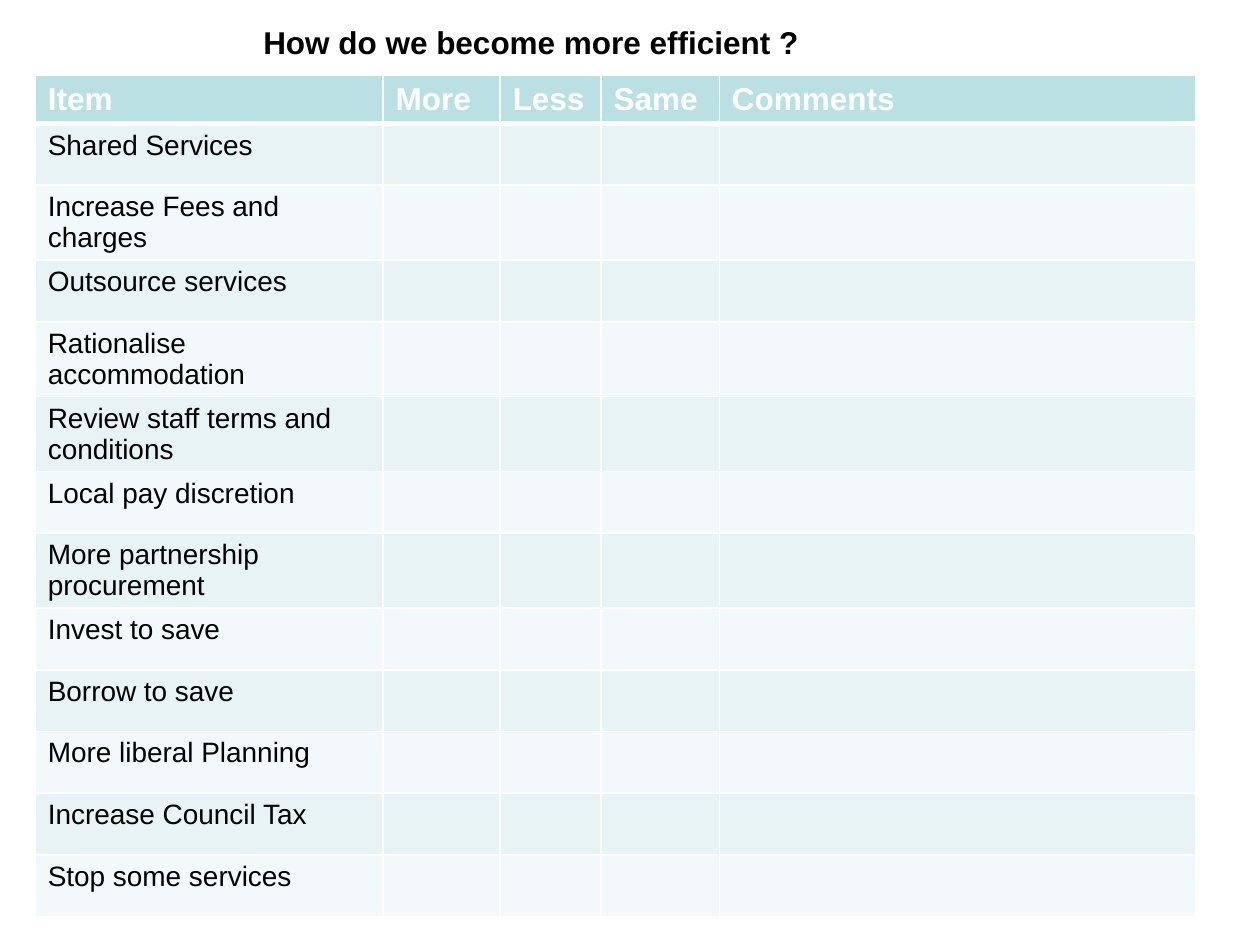
from dataclasses import dataclass

from lxml import etree
from pptx import Presentation
from pptx.dml.color import RGBColor
from pptx.enum.text import MSO_AUTO_SIZE, PP_ALIGN
from pptx.oxml.ns import qn
from pptx.util import Inches, Pt

CENTER = PP_ALIGN.CENTER
GROW_TO_TEXT = MSO_AUTO_SIZE.SHAPE_TO_FIT_TEXT


@dataclass(frozen=True)
class Theme:
    font: str = "Arial"
    heading_size: int = 18
    body_size: int = 16
    black: str = "000000"
    white: str = "FFFFFF"
    header_fill: str = "BBE0E3"
    band_fills: tuple = ("E7F3F4", "F3F9FA")


THEME = Theme()
HEADERS = ["Item", "More", "Less", "Same", "Comments"]
ITEMS = [
    "Shared Services",
    "Increase Fees and charges",
    "Outsource services",
    "Rationalise accommodation",
    "Review staff terms and conditions",
    "Local pay discretion",
    "More partnership procurement",
    "Invest to save",
    "Borrow to save",
    "More liberal Planning",
    "Increase Council Tax",
    "Stop some services",
]
COLUMN_WIDTHS = [2.76, 0.93, 0.8, 0.94, 3.78]
HEADER_HEIGHT = 0.33
ITEM_HEIGHT = 0.49


def format_text(paragraph, size, color, bold):
    for run in paragraph.runs:
        run.font.name = THEME.font
        run.font.size = Pt(size)
        run.font.bold = bold
        run.font.color.rgb = RGBColor.from_string(color)


def style_cell(cell, fill, border_widths):
    """Give the cell its fill and white borders, with widths in points by side."""
    properties = cell._tc.get_or_add_tcPr()
    for side, width in border_widths.items():
        line = etree.SubElement(properties, qn(f"a:ln{side}"), w=str(Pt(width)))
        solid_fill = etree.SubElement(line, qn("a:solidFill"))
        etree.SubElement(solid_fill, qn("a:srgbClr"), val=THEME.white)
    cell.fill.solid()
    cell.fill.fore_color.rgb = RGBColor.from_string(fill)


presentation = Presentation()
presentation.slide_width = Inches(10)
presentation.slide_height = Inches(7.5)
slide = presentation.slides.add_slide(presentation.slide_layouts[6])

table_frame = slide.shapes.add_table(
    len(ITEMS) + 1, len(HEADERS), Inches(0.28), Inches(0.6), Inches(9.21), Inches(6.86)
)
table = table_frame.table
table.horz_banding = False
for column, width in zip(table.columns, COLUMN_WIDTHS):
    column.width = Inches(width)

rows = [HEADERS] + [[item] + [""] * (len(HEADERS) - 1) for item in ITEMS]
for row_index, texts in enumerate(rows):
    is_header = row_index == 0
    table.rows[row_index].height = Inches(HEADER_HEIGHT if is_header else ITEM_HEIGHT)
    fill = THEME.header_fill if is_header else THEME.band_fills[(row_index - 1) % 2]
    size = THEME.heading_size if is_header else THEME.body_size
    color = THEME.white if is_header else THEME.black
    border_widths = {
        "L": 1,
        "R": 1,
        "T": 3 if row_index == 1 else 1,
        "B": 3 if is_header else 1,
    }
    for column_index, text in enumerate(texts):
        cell = table.cell(row_index, column_index)
        style_cell(cell, fill, border_widths)
        if text:
            cell.text_frame.text = text
            format_text(cell.text_frame.paragraphs[0], size, color, is_header)
table_frame.height = Inches(6.86)

title = slide.shapes.add_textbox(Inches(0.91), Inches(0.13), Inches(6.61), Inches(0.4))
title.text_frame.word_wrap = True
title.text_frame.auto_size = GROW_TO_TEXT
title.text_frame.text = "How do we become more efficient ?"
title_paragraph = title.text_frame.paragraphs[0]
title_paragraph.alignment = CENTER
format_text(title_paragraph, THEME.heading_size, THEME.black, True)

presentation.save("out.pptx")
